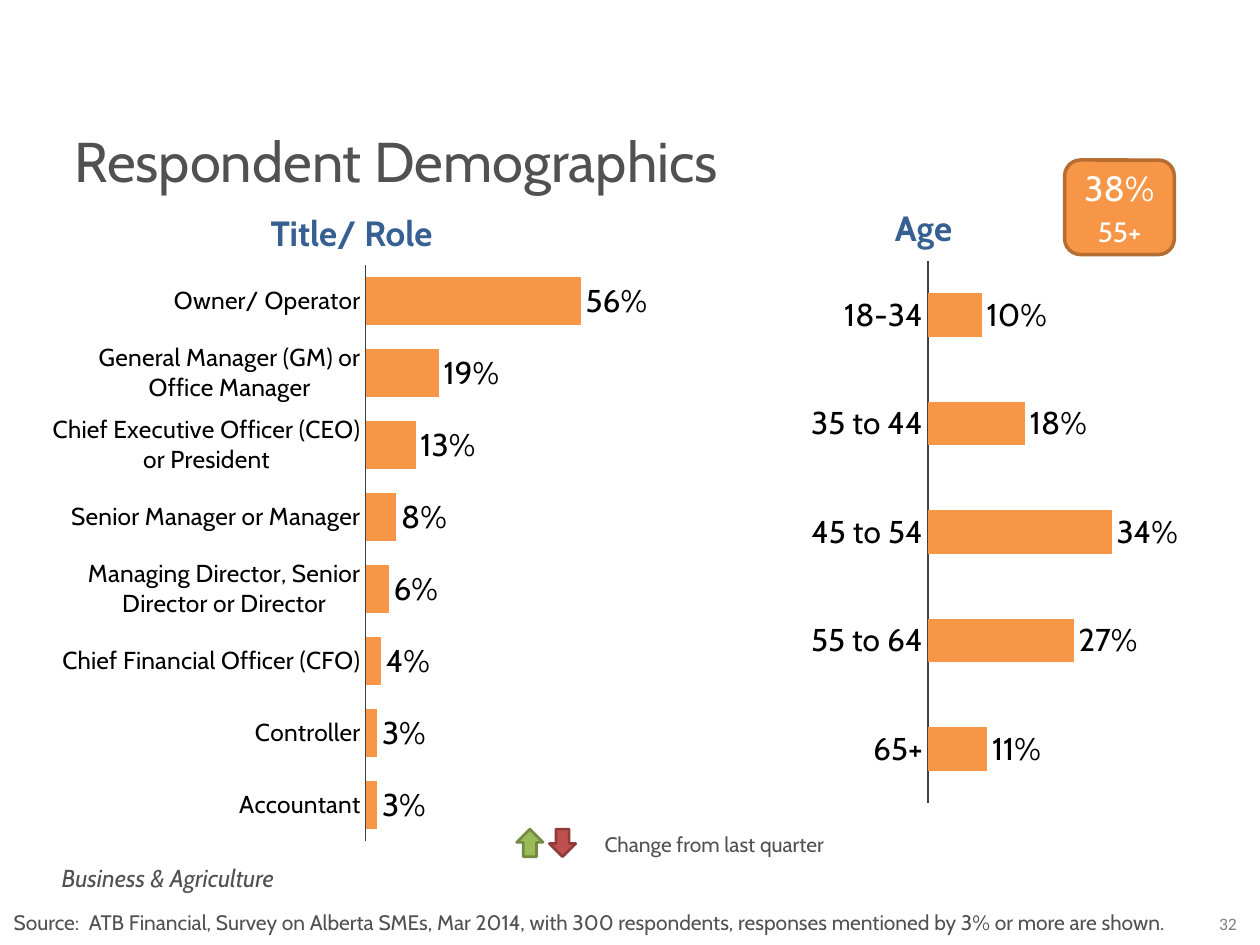
import pptx
import pptx.chart.data
import pptx.dml.color
import pptx.enum.chart
import pptx.enum.shapes
import pptx.enum.text
import pptx.oxml
import pptx.oxml.ns
import pptx.util
from lxml import etree

RGB = pptx.dml.color.RGBColor
GREY = RGB(0x50, 0x51, 0x50)
PAGE_GREY = RGB(0x80, 0x80, 0x80)
AXIS_GREY = RGB(0x40, 0x40, 0x40)
BLUE = RGB(0x37, 0x60, 0x92)
ORANGE = RGB(0xF7, 0x96, 0x46)
DARK_ORANGE = RGB(0xB6, 0x6D, 0x31)
GREEN = RGB(0x9B, 0xBB, 0x59)
DARK_GREEN = RGB(0x73, 0x8A, 0x42)
RED = RGB(0xC0, 0x50, 0x4D)
DARK_RED = RGB(0x8E, 0x3B, 0x39)
WHITE = RGB(0xFF, 0xFF, 0xFF)
BLACK = RGB(0, 0, 0)

ALIGN = pptx.enum.text.PP_ALIGN
ANCHOR = pptx.enum.text.MSO_ANCHOR
Pt = pptx.util.Pt

# The slide is a grid of 100 columns by 75 rows
WIDTH, HEIGHT = pptx.util.Inches(10), pptx.util.Inches(7.5)
COLUMN, ROW = WIDTH / 100, HEIGHT / 75


def to_emu(box):
    left, top, width, height = box
    return [int(n) for n in (left * COLUMN, top * ROW, width * COLUMN, height * ROW)]


def place(shape, box):
    shape.left, shape.top, shape.width, shape.height = to_emu(box)


def style(font, size, color, name="Cabin", bold=False, italic=False):
    font.name, font.size, font.bold, font.italic = name, Pt(size), bold, italic
    font.color.rgb = color


def add_label(slide, box, text, size, color, align=ALIGN.LEFT, **look):
    label = slide.shapes.add_textbox(*to_emu(box))
    label.text_frame.word_wrap = True
    label.text_frame.text = text
    paragraph = label.text_frame.paragraphs[0]
    paragraph.alignment = align
    style(paragraph.runs[0].font, size, color, **look)


def paint(shape, fill, line, weight=1.5):
    shape.fill.solid()
    shape.fill.fore_color.rgb = fill
    shape.line.color.rgb = line
    shape.line.width = Pt(weight)
    shape.shadow.inherit = False


def add_title(slide, box, text):
    title = slide.shapes.title
    place(title, box)
    title.text_frame.text = text
    title.text_frame.vertical_anchor = ANCHOR.MIDDLE
    title.text_frame.auto_size = pptx.enum.text.MSO_AUTO_SIZE.NONE
    title.text_frame.paragraphs[0].alignment = ALIGN.LEFT
    style(title.text_frame.paragraphs[0].runs[0].font, 32, GREY)


def set_plot_area(chart, x, y, w, h):
    """Fix the inner plot area, in shares of the chart."""
    plot_area = chart._chartSpace.chart.plotArea
    for old in plot_area.findall(pptx.oxml.ns.qn("c:layout")):
        plot_area.remove(old)
    plot_area.insert(0, pptx.oxml.parse_xml(
        f'<c:layout {pptx.oxml.ns.nsdecls("c")}><c:manualLayout>'
        '<c:layoutTarget val="inner"/><c:xMode val="edge"/><c:yMode val="edge"/>'
        f'<c:x val="{x}"/><c:y val="{y}"/><c:w val="{w}"/><c:h val="{h}"/>'
        '</c:manualLayout></c:layout>'))


def add_panel(slide, box, heading, heading_offset, shares, maximum, gap,
              axis_size, axis_weight, plot_left):
    """A heading with a bar chart of respondent shares below it."""
    left, top, width, height = box
    add_label(slide, (left + heading_offset, top, 22.4, 4.4), heading, 20, BLUE,
              ALIGN.CENTER, bold=True)

    data = pptx.chart.data.CategoryChartData(number_format="0%")
    data.categories = list(shares)
    data.add_series("Series 1", list(shares.values()))
    chart = slide.shapes.add_chart(
        pptx.enum.chart.XL_CHART_TYPE.BAR_CLUSTERED,
        *to_emu((left, top + 4.7, width, height - 4.7)), data).chart
    chart.has_legend = chart.has_title = False
    style(chart.font, axis_size, BLACK)
    set_plot_area(chart, plot_left, 0, round(1 - plot_left, 3), 0.957)

    groups = chart.category_axis
    groups.reverse_order = True
    groups.major_tick_mark = pptx.enum.chart.XL_TICK_MARK.NONE
    groups.format.line.color.rgb = AXIS_GREY
    groups.format.line.width = Pt(axis_weight)
    scale = chart.value_axis
    scale.minimum_scale, scale.maximum_scale = 0, maximum
    scale.has_major_gridlines = False
    scale.visible = False

    bars = chart.plots[0]
    bars.gap_width = gap
    bars.vary_by_categories = False
    bars.series[0].format.fill.solid()
    bars.series[0].format.fill.fore_color.rgb = ORANGE
    bars.has_data_labels = True
    labels = bars.data_labels
    labels.show_value = True
    labels.number_format, labels.number_format_is_linked = "0%", False
    labels.position = pptx.enum.chart.XL_LABEL_POSITION.OUTSIDE_END
    style(labels.font, 18, BLACK)


def add_callout(slide, box, lines):
    """The body placeholder as a rounded badge."""
    badge = slide.placeholders[1]
    place(badge, box)
    outline = etree.SubElement(badge._element.spPr, pptx.oxml.ns.qn("a:prstGeom"),
                               prst="roundRect")
    etree.SubElement(outline, pptx.oxml.ns.qn("a:avLst"))
    paint(badge, ORANGE, DARK_ORANGE, 2)
    frame = badge.text_frame
    frame.vertical_anchor = ANCHOR.MIDDLE
    frame.auto_size = pptx.enum.text.MSO_AUTO_SIZE.NONE
    frame.text = "\n".join(lines)
    for paragraph, size in zip(frame.paragraphs, lines.values()):
        properties = paragraph._p.get_or_add_pPr()
        properties.set("marL", "0")
        properties.set("indent", "0")
        etree.SubElement(properties, pptx.oxml.ns.qn("a:buNone"))
        paragraph.alignment = ALIGN.CENTER
        paragraph.space_before = Pt(0 if paragraph._p is frame.paragraphs[0]._p else 3)
        style(paragraph.runs[0].font, size, WHITE)


def add_change_key(slide, box):
    """Up and down arrows with their meaning."""
    left, top, width, height = box
    arrows = [(180, GREEN, DARK_GREEN), (0, RED, DARK_RED)]
    for index, (rotation, fill, line) in enumerate(arrows):
        arrow = slide.shapes.add_shape(
            pptx.enum.shapes.MSO_SHAPE.DOWN_ARROW,
            *to_emu((left + 2.6 * index, top + 0.3, 2.1, 2.2)))
        arrow.rotation = rotation
        paint(arrow, fill, line)
    add_label(slide, (left + 6, top, width - 6, height),
              "Change from last quarter", 12, GREY)


def add_footer(slide, box):
    """Segment, source and page number."""
    left, top, width, height = box
    add_label(slide, (left + 3.8, top, 28.1, 3.4), "Business & Agriculture", 14,
              GREY, italic=True)
    add_label(slide, (left, top + 3.7, width, 3),
              "Source:\u00a0 ATB Financial, Survey on Alberta SMEs, Mar 2014, with 300 "
              "respondents, responses mentioned by 3% or more are shown.", 12, GREY)
    add_label(slide, (left + width - 5, top + 4, 4.9, 2.7), "32", 10, PAGE_GREY,
              ALIGN.CENTER, name="Calibri")


ROLES = {
    "Owner/ Operator": 0.56,
    "General Manager (GM) or Office Manager": 0.19,
    "Chief Executive Officer (CEO) or President": 0.13,
    "Senior Manager or Manager": 0.08,
    "Managing Director, Senior Director or Director": 0.06,
    "Chief Financial Officer (CFO)": 0.04,
    "Controller": 0.03,
    "Accountant": 0.03,
}
AGES = {"18-34": 0.10, "35 to 44": 0.18, "45 to 54": 0.34, "55 to 64": 0.27, "65+": 0.11}


def main():
    deck = pptx.Presentation()
    deck.slide_width, deck.slide_height = WIDTH, HEIGHT
    slide = deck.slides.add_slide(deck.slide_layouts[1])
    add_title(slide, (4.9, 9.5, 58.4, 6.4), "Respondent Demographics")
    add_panel(slide, (2.8, 16.3, 49.1, 52.5), "Title/ Role", 13.9, ROLES,
              maximum=0.75, gap=50, axis_size=14, axis_weight=0.75, plot_left=0.534)
    add_panel(slide, (51.9, 15.9, 43.2, 49.8), "Age", 10.2, AGES,
              maximum=0.5, gap=150, axis_size=18, axis_weight=1.25, plot_left=0.503)
    add_callout(slide, (84.5, 12.7, 8.7, 7.5), {"38%": 20, "55+": 16})
    add_change_key(slide, (41, 65.5, 30, 3.1))
    add_footer(slide, (0.1, 68, 99.9, 6.7))
    deck.save("out.pptx")


if __name__ == "__main__":
    main()
